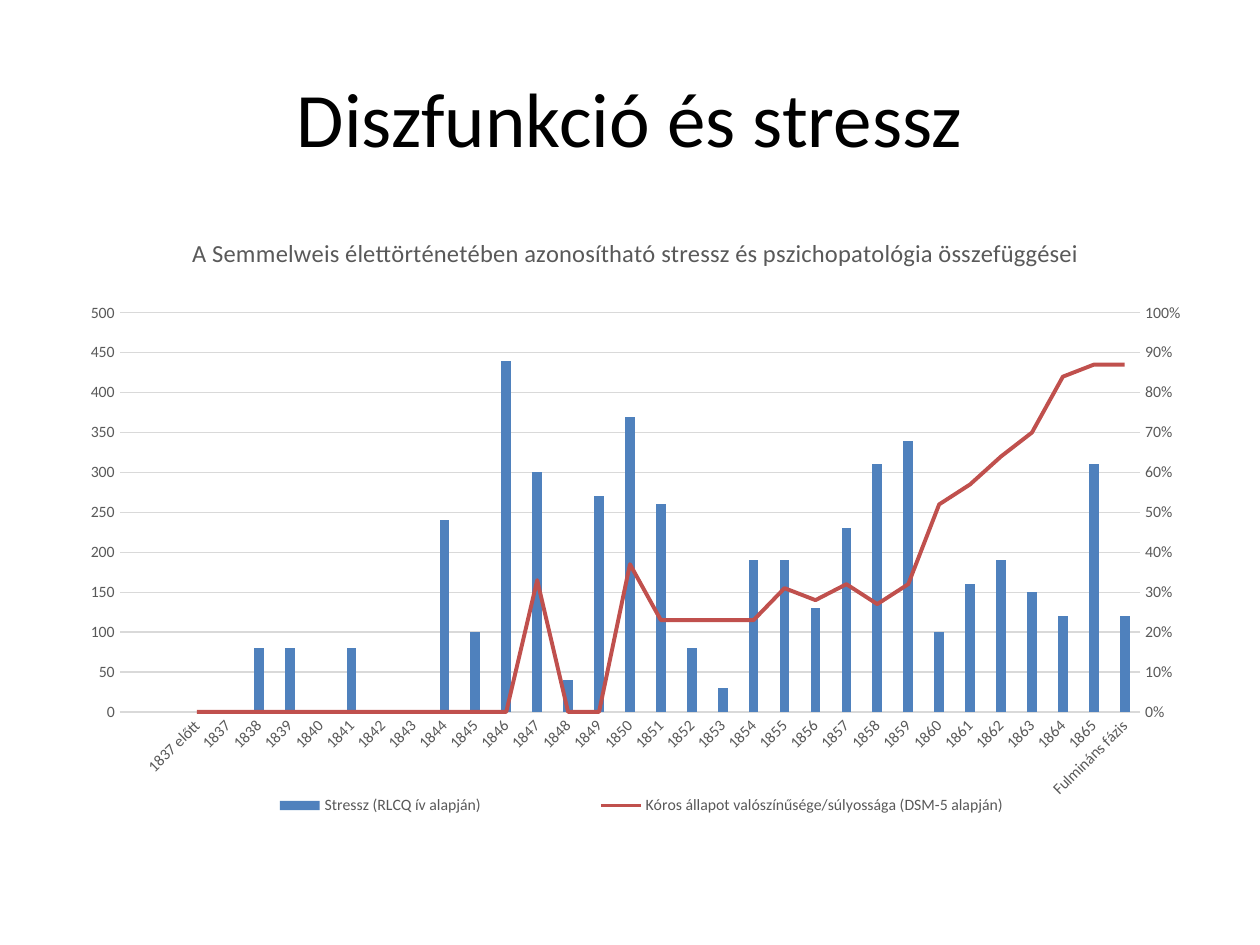
from copy import deepcopy

from pptx import Presentation
from pptx import util as u
from pptx.chart import data as chart_data
from pptx.dml import color
from pptx.enum import chart as charts, text
from pptx.oxml import parse_xml
from pptx.oxml.ns import nsdecls, qn

TITLE = "Diszfunkció és stressz"
CHART_TITLE = "A Semmelweis élettörténetében azonosítható stressz és pszichopatológia összefüggései"
YEARS = ["", "", "1837 előtt", *map(str, range(1837, 1866)), "Fulmináns fázis"]
STRESS = ("Stressz (RLCQ ív alapján)", [
    None, None, None, None, 80, 80, None, 80, None, None, 240,
    100, 440, 300, 40, 270, 370, 260, 80, 30, 190, 190,
    130, 230, 310, 340, 100, 160, 190, 150, 120, 310, 120])
DISORDER = ("Kóros állapot valószínűsége/súlyossága (DSM-5 alapján)", [
    None, None, *[0] * 11, 0.33, 0, 0, 0.37, 0.23, 0.23, 0.23, 0.23, 0.31,
    0.28, 0.32, 0.27, 0.32, 0.52, 0.57, 0.64, 0.7, 0.84, 0.87, 0.87])

BLUE, RED, GRAY, GRID, BLACK = "4F81BD", "C0504D", "595959", "D9D9D9", "000000"
TITLE_BOX = (36, 21.6, 648, 90)
CHART_BOX = (36, 128.9, 648, 356.4)
CATEGORY_ID, VALUE_ID = "50010", "50020"


def rgb(code):
    return color.RGBColor.from_string(code)


def assign(target, **values):
    for name, value in values.items():
        setattr(target, name, value)


def style_font(font, size, code):
    assign(font, name="Calibri", size=u.Pt(size), bold=False)
    font.color.rgb = rgb(code)


def style_line(line, width, code):
    line.width = u.Pt(width)
    line.color.rgb = rgb(code)


def remove_children(parent, tag):
    for child in parent.findall(qn(tag)):
        parent.remove(child)


def place(successor, inner=False, **fractions):
    remove_children(successor.getparent(), "c:layout")
    target = '<c:layoutTarget val="inner"/>' if inner else ""
    modes = "".join(f'<c:{axis}Mode val="edge"/>' for axis in "xy")
    sizes = "".join(f'<c:{name} val="{value}"/>' for name, value in fractions.items())
    successor.addprevious(parse_xml(
        f'<c:layout {nsdecls("c")}><c:manualLayout>{target}{modes}{sizes}'
        '</c:manualLayout></c:layout>'))


def secondary_axis(source, own_id, cross_id, **values):
    axis = deepcopy(source)
    remove_children(axis, "c:majorGridlines")
    for tag, value in {"axId": own_id, "crossAx": cross_id, **values}.items():
        axis.find(qn(f"c:{tag}")).set("val", value)
    return axis


def move_to_line_plot(chart):
    bars = chart.plots[0]._element
    series = bars.findall(qn("c:ser"))[1]
    remove_children(series, "c:invertIfNegative")
    lines = parse_xml(
        f'<c:lineChart {nsdecls("c")}><c:grouping val="standard"/><c:varyColors val="0"/>'
        f'<c:marker val="1"/><c:axId val="{CATEGORY_ID}"/><c:axId val="{VALUE_ID}"/></c:lineChart>')
    lines.find(qn("c:marker")).addprevious(series)
    bars.addnext(lines)

    value_source = chart.value_axis._element
    category = secondary_axis(chart.category_axis._element, CATEGORY_ID, VALUE_ID, delete="1")
    value = secondary_axis(value_source, VALUE_ID, CATEGORY_ID, axPos="r", crosses="max", majorUnit="0.1")
    value.find(qn("c:scaling")).find(qn("c:max")).set("val", "1")
    value.find(qn("c:numFmt")).set("formatCode", "0%")
    value_source.addnext(value)
    value.addnext(category)


def add_title(page):
    box = page.shapes.add_textbox(*map(u.Pt, TITLE_BOX))
    assign(box.text_frame, word_wrap=True, vertical_anchor=text.MSO_ANCHOR.MIDDLE)
    para = box.text_frame.paragraphs[0]
    para.alignment = text.PP_ALIGN.CENTER
    span = para.add_run()
    span.text = TITLE
    style_font(span.font, 44, BLACK)


def add_stress_chart(page):
    data = chart_data.CategoryChartData()
    data.categories = YEARS
    data.add_series(*STRESS, number_format="General")
    data.add_series(*DISORDER, number_format="0%")
    chart = page.shapes.add_chart(
        charts.XL_CHART_TYPE.COLUMN_CLUSTERED, *map(u.Pt, CHART_BOX), data).chart
    style_font(chart.font, 10, BLACK)

    heading = chart.chart_title
    heading.text_frame.text = CHART_TITLE
    style_font(heading.text_frame.paragraphs[0].runs[0].font, 14, GRAY)
    place(heading._element.find(qn("c:overlay")), x=0.11, y=0.01)

    chart.has_legend = True
    assign(chart.legend, position=charts.XL_LEGEND_POSITION.BOTTOM, include_in_layout=False)
    style_font(chart.legend.font, 9, GRAY)
    place(chart.legend._element.find(qn("c:overlay")), x=0.09, y=0.9, w=0.84, h=0.06)

    for axis in (chart.category_axis, chart.value_axis):
        assign(axis, major_tick_mark=charts.XL_TICK_MARK.NONE,
               minor_tick_mark=charts.XL_TICK_MARK.NONE)
        style_font(axis.tick_labels.font, 9, GRAY)
    style_line(chart.category_axis.format.line, 0.75, GRID)
    chart.category_axis._element.find(qn("c:txPr")).find(qn("a:bodyPr")).set("rot", "-2700000")
    assign(chart.value_axis, minimum_scale=0, maximum_scale=500, major_unit=50,
           has_major_gridlines=True)
    assign(chart.value_axis.tick_labels, number_format="General", number_format_is_linked=False)
    style_line(chart.value_axis.major_gridlines.format.line, 0.75, GRID)
    chart.value_axis.format.line.fill.background()

    move_to_line_plot(chart)
    bars, lines = chart.plots
    assign(bars, gap_width=219, overlap=-27, vary_by_categories=False)
    fill = bars.series[0].format.fill
    fill.solid()
    fill.fore_color.rgb = rgb(BLUE)
    disorder = lines.series[0]
    style_line(disorder.format.line, 2.25, RED)
    disorder.marker.style = charts.XL_MARKER_STYLE.NONE
    disorder.smooth = False
    place(bars._element, inner=True, x=0.05, y=0.14, w=0.9, h=0.64)


def main():
    deck = Presentation()
    assign(deck, slide_width=u.Pt(720), slide_height=u.Pt(540))
    page = deck.slides.add_slide(deck.slide_layouts[6])
    add_title(page)
    add_stress_chart(page)
    deck.save("out.pptx")


if __name__ == "__main__":
    main()
